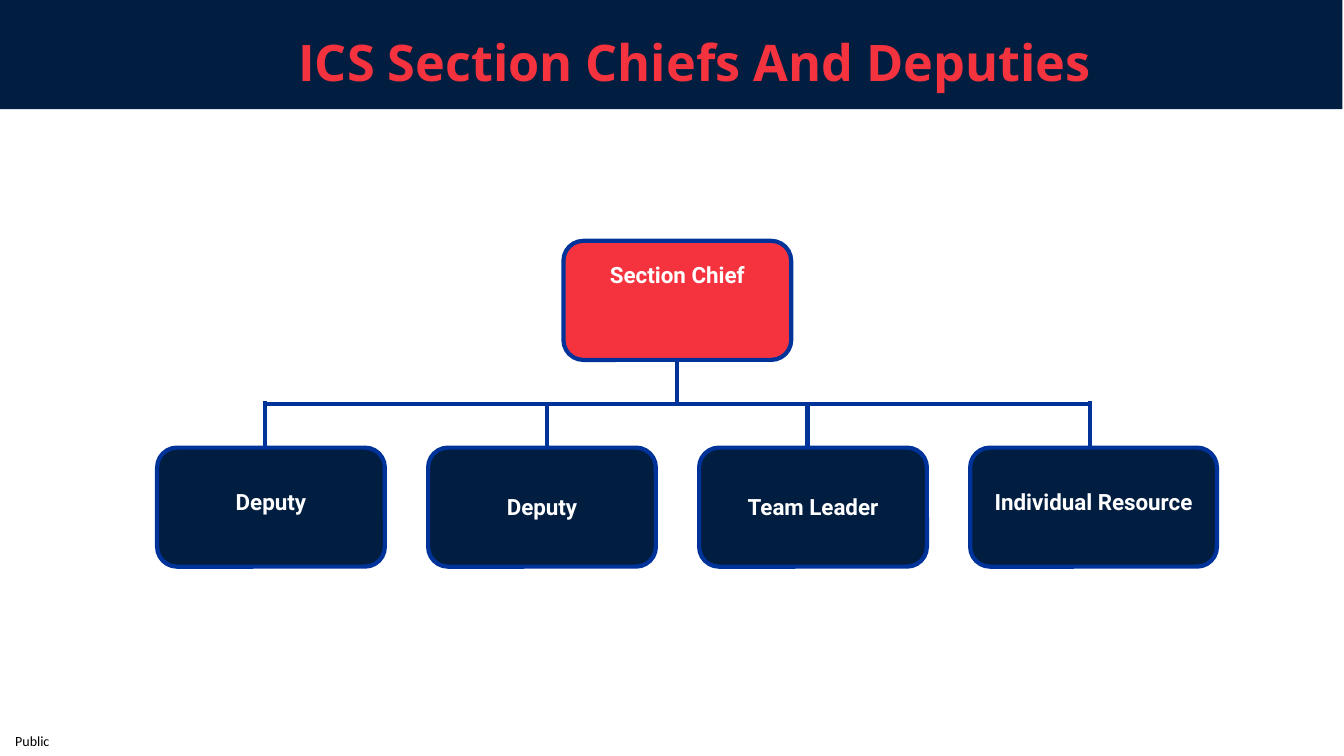
"""Build a slide showing section chiefs and deputies as an organisation chart."""
from dataclasses import dataclass

from lxml import etree
from pptx import Presentation
from pptx.dml.color import RGBColor
from pptx.enum import shapes, text
from pptx.oxml import ns
from pptx.util import Cm, Pt

COLORS = {
    "navy": "011E41",
    "red": "F5333F",
    "blue": "003399",
    "white": "FFFFFF",
    "black": "000000",
}
ROW_LEFT, ROW_TOP, ROW_PITCH = 3.96, 11.28, 6.83
BOX_WIDTH, BOX_HEIGHT, LABEL_HEIGHT = 5.74, 3.0, 0.94
BAR_Y, STEM = 10.19, 1.37


@dataclass
class Role:
    """A box of the chart, with its label's offset and width in centimetres."""
    name: str
    left: float
    top: float
    label_dy: float
    label_width: float
    width: float = BOX_WIDTH
    fill: str = "navy"


@dataclass
class Line:
    """A straight line between two points in centimetres."""
    x1: float
    y1: float
    x2: float
    y2: float


def row_left(column: int) -> float:
    """Return the left edge of a box in the lower row."""
    return ROW_LEFT + column * ROW_PITCH


def stem(x: float, top: float) -> Line:
    """Return a vertical stem of the standard length."""
    return Line(x, top, x, top + STEM)


ROLES = [
    Role("Team Leader", row_left(2), ROW_TOP, 1.01, 4.37),
    Role("Individual Resource", row_left(3), ROW_TOP, 0.89, 6.35, width=6.22),
    Role("Deputy", row_left(0), ROW_TOP, 0.89, 4.75),
    Role("Deputy", row_left(1), ROW_TOP, 1.01, 4.37),
    Role("Section Chief", 14.2, 6.07, 0.38, 4.85, fill="red"),
]
STEMS = [
    stem(27.46, BAR_Y - 0.08),
    stem(20.35, BAR_Y),
    stem(17.07, BAR_Y - STEM),
    stem(13.79, BAR_Y),
    stem(6.68, BAR_Y - 0.08),
]
BAR = Line(6.68, BAR_Y, 27.46, BAR_Y)


def rgb(name: str) -> RGBColor:
    """Look up a colour by name."""
    return RGBColor.from_string(COLORS[name])


def write(tf, words: str, font: str, size: float, color: str, bold: bool = True) -> None:
    """Set one centred paragraph and format its run."""
    tf.text = words
    p = tf.paragraphs[0]
    p.alignment = text.PP_ALIGN.CENTER
    r = p.runs[0]
    r.font.name, r.font.size, r.font.bold = font, Pt(size), bold
    r.font.color.rgb = rgb(color)


def draw_line(s, line: Line) -> None:
    """Draw a chart line without a shadow."""
    c = s.shapes.add_connector(
        shapes.MSO_CONNECTOR.STRAIGHT,
        Cm(line.x1), Cm(line.y1), Cm(line.x2), Cm(line.y2))
    c.line.color.rgb, c.line.width = rgb("blue"), Pt(3)
    etree.SubElement(c.element.spPr, ns.qn("a:effectLst"))


def draw_role(s, role: Role) -> None:
    """Draw a rounded box and its centred label."""
    sp = s.shapes.add_shape(
        shapes.MSO_SHAPE.ROUNDED_RECTANGLE,
        Cm(role.left), Cm(role.top), Cm(role.width), Cm(BOX_HEIGHT))
    sp.shadow.inherit = False
    sp.fill.solid()
    sp.fill.fore_color.rgb = rgb(role.fill)
    sp.line.color.rgb, sp.line.width = rgb("blue"), Pt(3)
    label_left = role.left + (role.width - role.label_width) / 2
    label = s.shapes.add_textbox(
        Cm(label_left), Cm(role.top + role.label_dy),
        Cm(role.label_width), Cm(LABEL_HEIGHT))
    label.text_frame.word_wrap = True
    write(label.text_frame, role.name, "Roboto", 16, "white")


def draw_header(s, prs) -> None:
    """Draw the title on its band."""
    band = s.shapes.add_shape(
        shapes.MSO_SHAPE.RECTANGLE, Cm(-0.04), Cm(-0.03), prs.slide_width, Cm(2.78))
    band.shadow.inherit = False
    band.fill.solid()
    band.fill.fore_color.rgb = rgb("navy")
    band.line.fill.background()
    title = s.shapes.title
    title.element.addprevious(band.element)
    title.left, title.top, title.width, title.height = Cm(1.85), Cm(1.37), Cm(32), Cm(0.99)
    tf = title.text_frame
    tf.auto_size = text.MSO_AUTO_SIZE.NONE
    tf.vertical_anchor = text.MSO_ANCHOR.MIDDLE
    tf.margin_right, tf.margin_bottom = Cm(0.94), Cm(0.76)
    write(tf, "ICS Section Chiefs And Deputies", "Open Sans", 36, "red")


def draw_marking(s) -> None:
    """Write the classification in the bottom corner."""
    tf = s.shapes.add_textbox(0, Cm(18.31), Cm(1.63), Cm(0.74)).text_frame
    tf.margin_left = tf.margin_right = tf.margin_top = tf.margin_bottom = 0
    tf.word_wrap = True
    tf.vertical_anchor = text.MSO_ANCHOR.MIDDLE
    write(tf, "Public", "Calibri", 10, "black", bold=False)


def main() -> None:
    """Build and save the slide."""
    prs = Presentation()
    prs.slide_width, prs.slide_height = Cm(33.87), Cm(19.05)
    s = prs.slides.add_slide(prs.slide_layouts[5])
    draw_header(s, prs)
    draw_marking(s)
    for line in STEMS:
        draw_line(s, line)
    for role in ROLES:
        draw_role(s, role)
    draw_line(s, BAR)
    prs.save("out.pptx")


if __name__ == "__main__":
    main()
